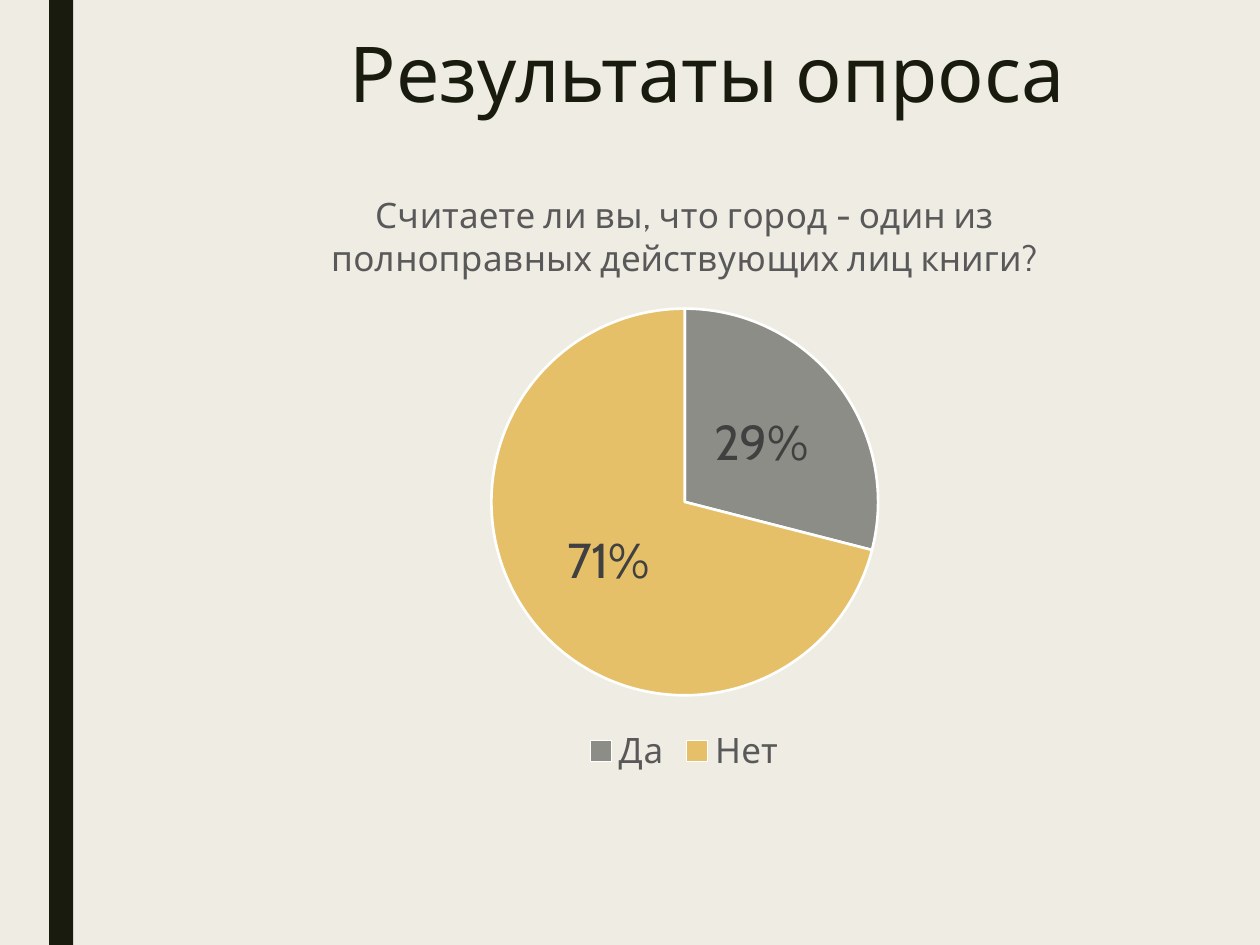
from dataclasses import dataclass

from lxml import etree
from pptx import Presentation
from pptx.chart.data import CategoryChartData
from pptx.dml.color import RGBColor
from pptx.enum.chart import XL_CHART_TYPE as ChartType
from pptx.enum.chart import XL_LABEL_POSITION as LabelPos
from pptx.enum.chart import XL_LEGEND_POSITION as LegendPos
from pptx.enum.shapes import MSO_SHAPE as Shape
from pptx.enum.text import MSO_ANCHOR as Anchor
from pptx.enum.text import PP_ALIGN as Align
from pptx.oxml.ns import qn
from pptx.util import Inches, Pt

# Content
HEADING = "Результаты опроса"
QUESTION = "Считаете ли вы, что город - один из полноправных действующих лиц книги?"
ANSWERS = {"Да": 29, "Нет": 71}

# Layout in inches: left, top, width, height
SLIDE = (10, 7.5)
STRIPE = (0.39, 0, 0.19, 7.5)
HEADING_BOX = (1.5, 0.24, 8.23, 1.07)
CHART_BOX = (1.14, 1.31, 8.58, 4.88)
PIE_BOX = (3.9, 2.45, 3.07, 3.07)


@dataclass(frozen=True)
class Theme:
    font: str = "Cabin"
    paper: str = "EFEDE3"
    ink: str = "191B0E"
    muted: str = "595959"
    label: str = "404040"
    edge: str = "FFFFFF"
    slices: tuple = ("8C8D86", "E6C069")
    heading_size: int = 44
    chart_size: int = 20
    label_size: int = 28


T = Theme()


def paint(fill, color):
    fill.solid()
    fill.fore_color.rgb = RGBColor.from_string(color)


def style(font, size, color):
    font.name, font.size, font.bold = T.font, Pt(size), False
    font.color.rgb = RGBColor.from_string(color)


def write(tf, text, *, size, color, align=Align.CENTER, spacing=None):
    p = tf.paragraphs[0]
    p.alignment = align
    if spacing:
        p.line_spacing = spacing
    r = p.add_run()
    r.text = text
    style(r.font, size, color)


def place_plot(chart, box, frame):
    """Fix the inner plot area at a slide position, as fractions of the chart."""
    (x, y, w, h), (fx, fy, fw, fh) = box, frame
    area = chart.plots[0]._element.getparent()
    for old in area.findall(qn("c:layout")):
        area.remove(old)
    layout = etree.Element(qn("c:layout"))
    manual = etree.SubElement(layout, qn("c:manualLayout"))
    parts = {"layoutTarget": "inner", "xMode": "edge", "yMode": "edge",
             "x": (x - fx) / fw, "y": (y - fy) / fh, "w": w / fw, "h": h / fh}
    for tag, val in parts.items():
        etree.SubElement(manual, qn(f"c:{tag}")).set("val", str(val))
    area.insert(0, layout)


def add_pie(s):
    data = CategoryChartData(number_format="0")
    data.categories = list(ANSWERS)
    data.add_series("Series 1", list(ANSWERS.values()))
    chart = s.shapes.add_chart(ChartType.PIE, *map(Inches, CHART_BOX), data).chart
    style(chart.font, T.chart_size, T.muted)

    chart.has_title = True
    write(chart.chart_title.text_frame, QUESTION, size=T.chart_size, color=T.muted)
    chart.chart_title.include_in_layout = False

    chart.has_legend = True
    chart.legend.position = LegendPos.BOTTOM
    chart.legend.include_in_layout = False
    style(chart.legend.font, T.chart_size, T.muted)

    plot = chart.plots[0]
    plot.vary_by_categories = True
    for i, color in enumerate(T.slices):
        fmt = plot.series[0].points[i].format
        paint(fmt.fill, color)
        paint(fmt.line.fill, T.edge)
        fmt.line.width = Pt(1.5)

    labels = plot.series[0].data_labels
    labels.show_percentage, labels.show_value = True, False
    labels.number_format, labels.number_format_is_linked = "0%", False
    labels.position = LabelPos.CENTER
    style(labels.font, T.label_size, T.label)
    place_plot(chart, PIE_BOX, CHART_BOX)


def main():
    prs = Presentation()
    prs.slide_width, prs.slide_height = map(Inches, SLIDE)
    s = prs.slides.add_slide(prs.slide_layouts[6])
    paint(s.background.fill, T.paper)

    # Side stripe
    sp = s.shapes.add_shape(Shape.RECTANGLE, *map(Inches, STRIPE))
    sp.shadow.inherit = False
    paint(sp.fill, T.ink)
    sp.line.fill.background()

    # Survey chart
    add_pie(s)

    # Heading
    tf = s.shapes.add_textbox(*map(Inches, HEADING_BOX)).text_frame
    tf.word_wrap = True
    tf.vertical_anchor = Anchor.TOP
    write(tf, HEADING, size=T.heading_size, color=T.ink, spacing=0.89)

    prs.save("out.pptx")


if __name__ == "__main__":
    main()
